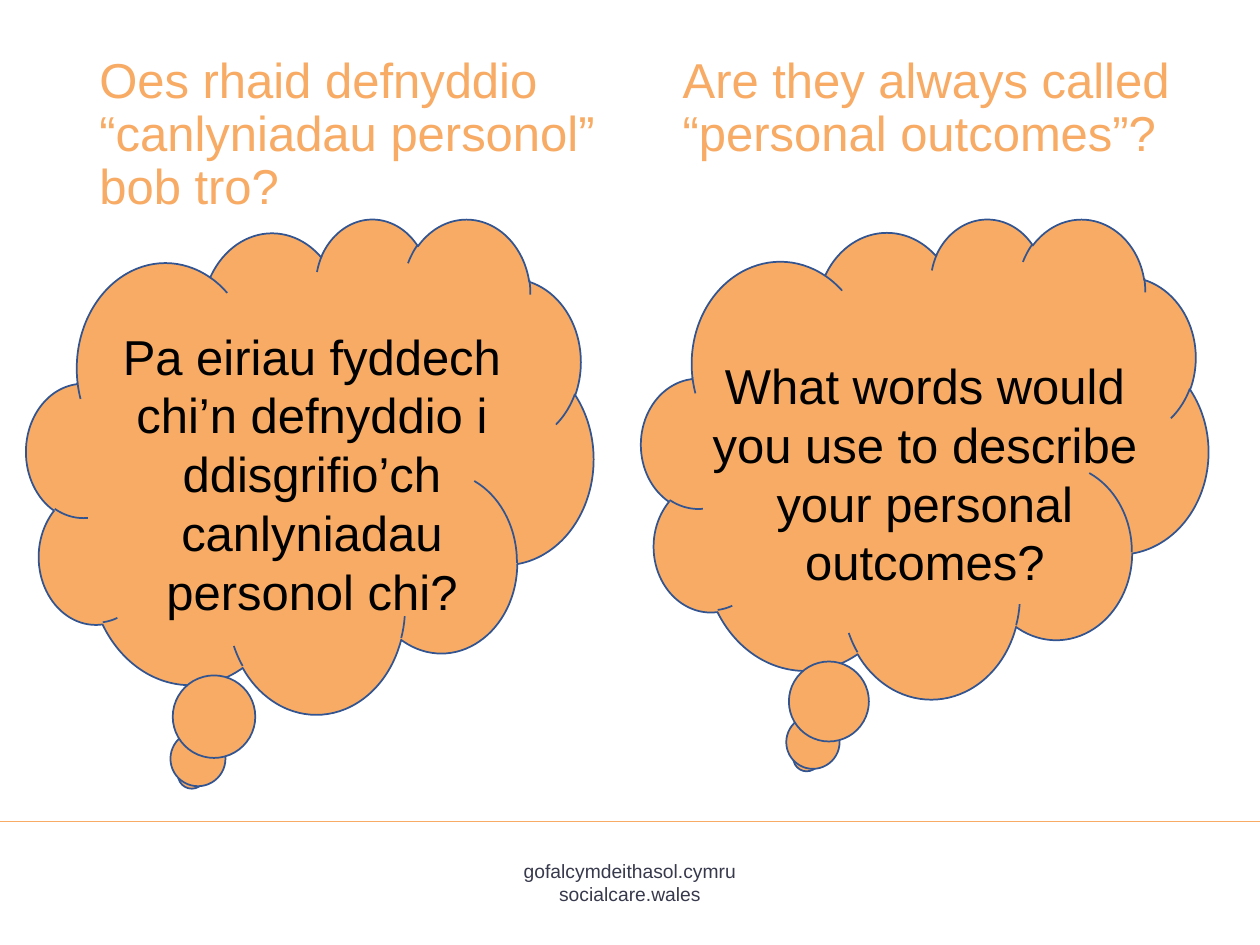
from lxml.etree import SubElement
from pptx import Presentation
from pptx.dml.color import RGBColor as RGB
from pptx.enum.shapes import MSO_CONNECTOR as LINE, MSO_SHAPE as SHAPE
from pptx.enum.text import MSO_ANCHOR as ANCHOR, PP_ALIGN as ALIGN
from pptx.oxml.ns import qn
from pptx.util import Inches, Pt

ORANGE = RGB(0xF7, 0xAB, 0x64)
BLUE = RGB(0x32, 0x54, 0x91)
SLATE = RGB(0x37, 0x39, 0x4C)
BLACK = RGB(0, 0, 0)

HEAD = {"size": 28, "color": ORANGE, "para": {"line_spacing": 0.9}}
BODY = {"size": 28, "color": BLACK, "para": {"alignment": ALIGN.CENTER},
        "frame": {"vertical_anchor": ANCHOR.MIDDLE}}
FOOT = {"size": 11, "color": SLATE, "para": {"alignment": ALIGN.CENTER}}


def put(target, values):
    for name, value in values.items():
        setattr(target, name, value)


def add_text(slide, box, lines, style):
    frame = slide.shapes.add_textbox(*map(Inches, box)).text_frame
    put(frame, {"word_wrap": True, **style.get("frame", {})})
    for i, line in enumerate(lines):
        para = frame.paragraphs[0] if i == 0 else frame.add_paragraph()
        put(para, style["para"])
        run = para.add_run()
        run.text = line
        put(run.font, {"name": "Arial", "size": Pt(style["size"])})
        run.font.color.rgb = style["color"]


def add_cloud(slide, box):
    cloud = slide.shapes.add_shape(SHAPE.CLOUD_CALLOUT, *map(Inches, box))
    cloud.shadow.inherit = False
    cloud.fill.solid()
    cloud.fill.fore_color.rgb = ORANGE
    cloud.line.color.rgb = BLUE
    cloud.line.width = Pt(1)


def add_side(slide, box, side):
    """One language: heading above a thought cloud with a question in it."""
    left, top, width, height = box
    # Heading
    x, wide = side["head_at"]
    add_text(slide, (left + x, top - 1.33, wide, 1.13), [side["head"]], HEAD)
    # Cloud and its question
    add_cloud(slide, (left, top, width, height))
    x, wide = side["body_at"]
    add_text(slide, (left + x, top + 1.01, wide, 2.03), [side["body"]], BODY)


def add_footer(slide, box):
    left, top, width, height = box
    # Rule across the slide
    rule = slide.shapes.add_connector(
        LINE.STRAIGHT, *map(Inches, (left, top, left + width, top)))
    rule.line.color.rgb = ORANGE
    rule.line.width = Pt(1)
    SubElement(rule._element.spPr, qn("a:effectLst"))
    # Web addresses, centred under the rule
    wide = 2.26
    add_text(slide, (left + (width - wide) / 2, top + 0.25, wide, 0.46),
             ["gofalcymdeithasol.cymru", "socialcare.wales"], FOOT)


WELSH = {
    "head": "Oes rhaid defnyddio “canlyniadau personol” bob tro?",
    "head_at": (0.48, 4.31),
    "body": "Pa eiriau fyddech chi’n defnyddio i ddisgrifio’ch "
            "canlyniadau personol chi?",
    "body_at": (0.48, 3.57),
}
ENGLISH = {
    "head": "Are they always called “personal outcomes”?",
    "head_at": (0.23, 4.27),
    "body": "What words would you use to describe your personal outcomes?",
    "body_at": (0.37, 3.76),
}


def main():
    deck = Presentation()
    put(deck, {"slide_width": Inches(10), "slide_height": Inches(7.5)})
    slide = deck.slides.add_slide(deck.slide_layouts[6])
    add_footer(slide, (0, 6.52, 10, 0.98))
    add_side(slide, (0.21, 1.73, 4.5, 3.93), WELSH)
    add_side(slide, (5.09, 1.73, 4.5, 3.81), ENGLISH)
    deck.save("out.pptx")


if __name__ == "__main__":
    main()
